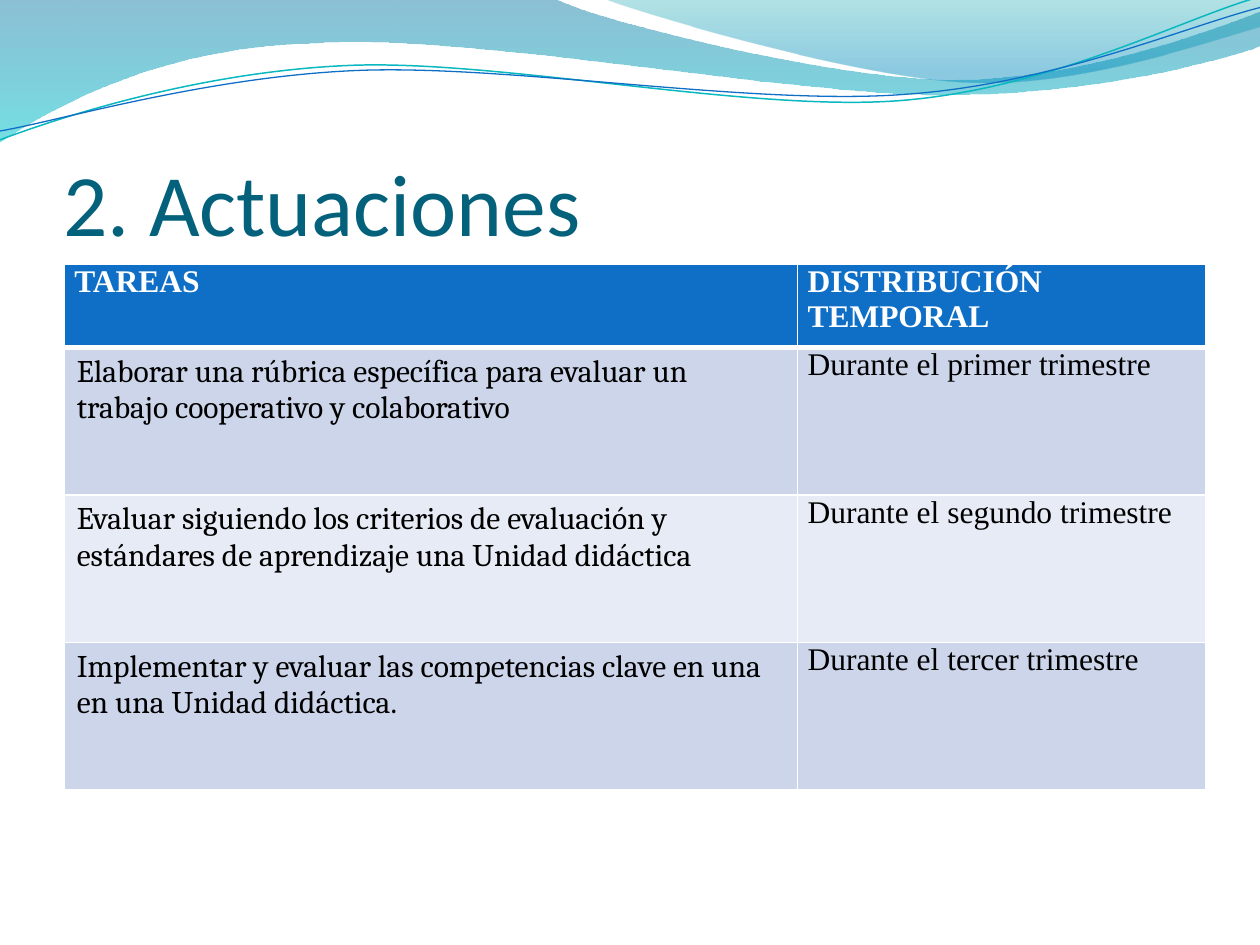
from lxml import etree
from pptx import Presentation
from pptx.dml.color import RGBColor
from pptx.enum.text import MSO_ANCHOR, MSO_AUTO_SIZE, PP_ALIGN
from pptx.oxml import parse_xml
from pptx.oxml.ns import nsdecls, qn
from pptx.util import Inches, Pt

WHITE = RGBColor(0xFF, 0xFF, 0xFF)
BLACK = RGBColor(0x00, 0x00, 0x00)
TITLE_TEAL = RGBColor(0x04, 0x61, 0x7B)
BLUE = RGBColor(0x0F, 0x6F, 0xC6)
TURQUOISE = RGBColor(0x0A, 0xB8, 0xBF)
DEEP_BLUE = RGBColor(0x00, 0x74, 0xA1)
CYAN = RGBColor(0x00, 0xC6, 0xCF)
SEA_GREEN = RGBColor(0x00, 0xA1, 0xA9)
SKY_BLUE = RGBColor(0x00, 0x8B, 0xBF)
BAND_DARK = RGBColor(0xCC, 0xD5, 0xEA)
BAND_LIGHT = RGBColor(0xE7, 0xEB, 0xF5)

# Outlines in inches: 2 numbers are a corner, 6 are a Bézier curve
LEFT_WAVE = [
    (0, 0), (4.4, -0.01),
    (4.76, 0.17, 6.64, 0.63, 7.58, 0.63), (8.53, 0.63, 9.58, 0.26, 10, 0.09),
    (10.01, 0.36),
    (9.83, 0.44, 8.7, 0.76, 7.46, 0.75), (6.22, 0.75, 3.82, 0.28, 2.57, 0.34),
    (1.29, 0.36, 0.46, 0.83, -0.01, 1.13),
]
RIGHT_WAVE = [
    (4.79, -0.01),
    (5.09, 0.11, 6.82, 0.62, 7.69, 0.65), (8.56, 0.69, 9.61, 0.32, 10, 0.21),
    (10, 0),
]
TURQUOISE_LINE = [
    (0, 1.11),
    (0.48, 0.93, 1.58, 0.57, 2.77, 0.52), (3.95, 0.47, 5.93, 0.89, 7.13, 0.8),
    (8.33, 0.71, 9.38, 0.15, 9.98, -0.02),
]
BLUE_LINE = [
    (0, 1.04),
    (0.47, 0.96, 1.64, 0.61, 2.83, 0.56), (4.03, 0.51, 5.97, 0.84, 7.17, 0.75),
    (8.36, 0.67, 9.41, 0.21, 10, 0.06),
]

HEADINGS = ("TAREAS", "DISTRIBUCIÓN TEMPORAL")
TASKS = [
    ("Elaborar una rúbrica específica para evaluar un trabajo cooperativo y colaborativo",
     "Durante el primer trimestre"),
    ("Evaluar siguiendo los criterios de evaluación y estándares de aprendizaje una Unidad didáctica",
     "Durante el segundo trimestre"),
    ("Implementar y evaluar las competencias clave en una en una Unidad didáctica.",
     "Durante el tercer trimestre"),
]


def add_outline(slide, outline, close):
    """Draw through all points, then join each curve's three into one Bézier."""
    start, *others = [(Inches(x), Inches(y)) for step in outline
                      for x, y in zip(step[::2], step[1::2])]
    builder = slide.shapes.build_freeform(*start)
    builder.add_line_segments(others, close=close)
    shape = builder.convert_to_shape()
    shape.shadow.inherit = False

    segments = iter(list(shape.element.spPr.iter(qn("a:lnTo"))))
    for step in outline[1:]:
        first = next(segments)
        if len(step) == 6:
            first.tag = qn("a:cubicBezTo")
            for _ in range(2):
                segment = next(segments)
                first.append(segment[0])
                segment.getparent().remove(segment)
    return shape


def add_wave(slide, outline, stops):
    """Stops are (position, colour, opacity in percent), top to bottom."""
    wave = add_outline(slide, outline, close=True)
    wave.line.fill.background()
    wave.fill.gradient()
    wave.fill.gradient_angle = 270
    for stop, (position, color, _) in zip(wave.fill.gradient_stops, stops):
        stop.position = position
        stop.color.rgb = color
    for rgb, (_, _, opacity) in zip(wave.element.spPr.iter(qn("a:srgbClr")), stops):
        etree.SubElement(rgb, qn("a:alpha")).set("val", str(opacity * 1000))


def add_wave_line(slide, outline, color, width):
    curve = add_outline(slide, outline, close=False)
    curve.fill.background()
    curve.line.color.rgb = color
    curve.line.width = Pt(width)


def add_run(paragraph, text, font, size, color, bold=False):
    run = paragraph.add_run()
    run.text = text
    run.font.name = font
    run.font.size = Pt(size)
    run.font.color.rgb = color
    run.font.bold = bold


def set_title(slide, text):
    title = slide.shapes.title
    title.left, title.top = Inches(0.5), Inches(0.77)
    title.width, title.height = Inches(9), Inches(1.25)
    frame = title.text_frame
    frame.auto_size = MSO_AUTO_SIZE.NONE
    frame.word_wrap = True
    frame.vertical_anchor = MSO_ANCHOR.BOTTOM
    frame.margin_left = frame.margin_right = frame.margin_bottom = 0
    frame.margin_top = Inches(0.05)
    frame.paragraphs[0].alignment = PP_ALIGN.LEFT
    add_run(frame.paragraphs[0], text, "Calibri", 50, TITLE_TEAL)


def set_borders(cell, **widths):
    properties = cell._tc.get_or_add_tcPr()
    for index, (side, width) in enumerate(widths.items()):
        properties.insert(index, parse_xml(
            f'<a:ln{side} {nsdecls("a")} w="{Pt(width)}"><a:solidFill>'
            f'<a:srgbClr val="{WHITE}"/></a:solidFill></a:ln{side}>'))


def fill_cell(cell, text, fill, font, color=BLACK, bold=False, tight=True, top=1, bottom=1):
    """Tight cells are justified, with narrow margins."""
    cell.fill.solid()
    cell.fill.fore_color.rgb = fill
    set_borders(cell, L=1, R=1, T=top, B=bottom)
    paragraph = cell.text_frame.paragraphs[0]
    if tight:
        cell.margin_left = cell.margin_right = Inches(0.08)
        cell.margin_top = cell.margin_bottom = 0
        paragraph.alignment = PP_ALIGN.JUSTIFY
    else:
        cell.margin_right = Inches(0.11)
    add_run(paragraph, text, font, 18, color, bold)


def add_task_table(slide):
    table = slide.shapes.add_table(
        len(TASKS) + 1, 2, Inches(0.51), Inches(2.1), Inches(9.06), Inches(4.17)).table
    for column, width in zip(table.columns, (5.82, 3.24)):
        column.width = Inches(width)
    for index, row in enumerate(table.rows):
        row.height = Inches(1.17 if index else 0.66)

    for column, heading in enumerate(HEADINGS):
        fill_cell(table.cell(0, column), heading, BLUE, "Times New Roman",
                  WHITE, bold=True, bottom=3)
    for row, (task, term) in enumerate(TASKS, start=1):
        band = BAND_DARK if row % 2 else BAND_LIGHT
        top = 3 if row == 1 else 1
        fill_cell(table.cell(row, 0), task, band, "Cambria", tight=False, top=top)
        fill_cell(table.cell(row, 1), term, band, "Times New Roman", top=top)


def main():
    presentation = Presentation()
    presentation.slide_width, presentation.slide_height = Inches(10), Inches(7.5)
    slide = presentation.slides.add_slide(presentation.slide_layouts[5])

    # Wave decoration along the top
    add_wave(slide, LEFT_WAVE, [(0, DEEP_BLUE, 45), (1, CYAN, 55)])
    add_wave(slide, RIGHT_WAVE, [(0, SEA_GREEN, 30), (0.8, SKY_BLUE, 45)])
    add_wave_line(slide, TURQUOISE_LINE, TURQUOISE, 0.85)
    add_wave_line(slide, BLUE_LINE, BLUE, 0.75)

    # Title and schedule of tasks
    set_title(slide, "2. Actuaciones")
    add_task_table(slide)

    presentation.save("out.pptx")


if __name__ == "__main__":
    main()
